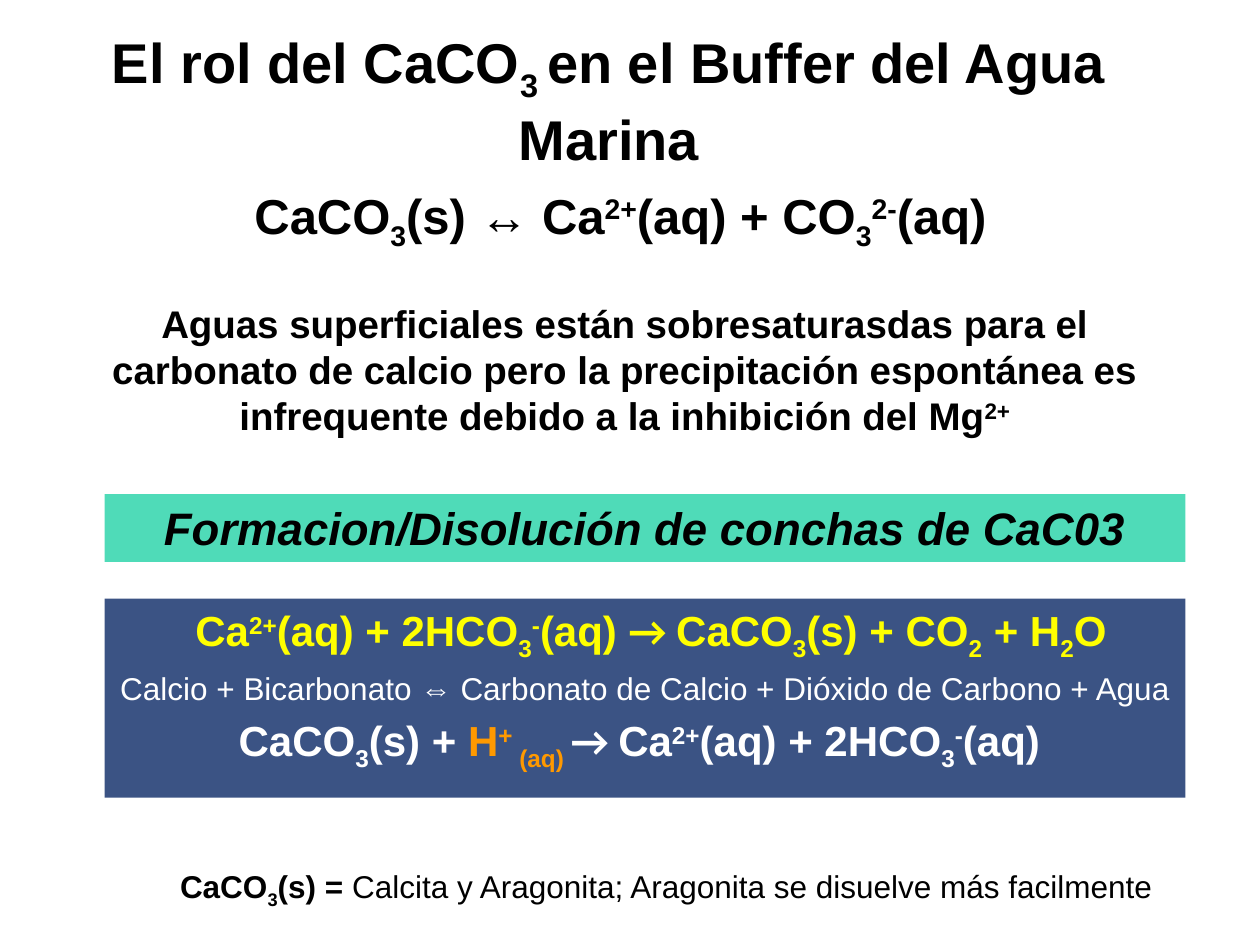
"""Build a slide on the role of CaCO3 in buffering sea water."""
from lxml.etree import SubElement
from pptx import Presentation
from pptx.dml.color import RGBColor
from pptx.enum.shapes import MSO_SHAPE
from pptx.enum.text import MSO_ANCHOR, MSO_AUTO_SIZE, PP_ALIGN
from pptx.oxml.ns import qn
from pptx.util import Cm, Pt

BASE = {"_": "-25000", "^": "30000"}
BLACK, WHITE, YELLOW, ORANGE = "000000", "FFFFFF", "FFFF00", "FF9900"
ARROW = ("→ ", {"font": "Calibri"})
PLAIN = {"bold": False}

# In formulas, | parts the runs, a leading _ lowers a run and ^ raises it.
TITLE = ["El rol del CaCO|_3 |en el Buffer del Agua Marina"]
NOTE = ["Aguas superficiales están sobresaturasdas para el carbonato de calcio "
        "pero la precipitación espontánea es infrequente debido a la "
        "inhibición del Mg|^2+"]
SPLIT = ["CaCO|_3|(s)", (" ↔ ", PLAIN), "Ca|^2+|(aq) + CO|_3|^2-|(aq)"]
HEAD = ["Formacion/Disolución de conchas de CaC03"]
FORM = [" Ca|^2+|(aq) + 2HCO|_3|^-|(aq) ", ARROW,
        "CaCO|_3|(s) + CO|_2| + H|_2|O"]
WORDS = ["Calcio + Bicarbonato ⇔ Carbonato de Calcio + Dióxido de Carbono + Agua "]
SOLVE = ["CaCO|_3|(s) + ", ("H|^+ |_(aq) ", {"color": ORANGE}), ARROW,
         "Ca|^2+|(aq) + 2HCO|_3|^-|(aq) "]
FOOT = ["CaCO|_3|(s) = ",
        ("Calcita y Aragonita; Aragonita se disuelve más facilmente", PLAIN)]

LEFT = {"align": PP_ALIGN.LEFT}
BOXES = [
    ((1.9, 0.84, 20.75, 2.34), {"anchor": MSO_ANCHOR.MIDDLE},
     [(TITLE, {"size": 32})]),
    ((1.9, 5.92, 21.39, 3.07), {"grow": True}, [(NOTE, {"size": 22})]),
    ((4.88, 3.61, 16.46, 1.45), {"grow": True, "wrap": False},
     [(SPLIT, {"size": 28, **LEFT})]),
    ((2.11, 12.07, 21.79, 4.01), {"fill": "002060", "alpha": 77},
     [(FORM, {"size": 24, "color": YELLOW, "gap": 0.2}),
      (WORDS, {"size": 18, "color": WHITE, "gap": 0.2, **PLAIN}),
      (SOLVE, {"size": 24, "color": WHITE, "gap": 0.2})]),
    ((2.11, 9.96, 21.79, 1.37), {"fill": "00CC99", "alpha": 69, "grow": True},
     [(HEAD, {"size": 26, "italic": True})]),
    ((3.38, 17.35, 20.5, 1.02), {"grow": True, "wrap": False},
     [(FOOT, {"size": 18, **LEFT})]),
]


def paint(fill, hue):
    fill.solid()
    fill.fore_color.rgb = RGBColor.from_string(hue)


def write(para, text, size=18, font="Arial", color=BLACK, bold=True, italic=False):
    for part in text.split("|"):
        base = BASE.get(part[0])
        run = para.add_run()
        run.text = part[1:] if base else part
        face = run.font
        face.size, face.name = Pt(size), font
        face.bold, face.italic = bold, italic
        paint(face.fill, color)
        if base:
            run._r.get_or_add_rPr().set("baseline", base)


def place(slide, spot, fill=None, alpha=100):
    spot = [Cm(side) for side in spot]
    if not fill:
        return slide.shapes.add_textbox(*spot)
    shape = slide.shapes.add_shape(MSO_SHAPE.RECTANGLE, *spot)
    shape.shadow.inherit = False
    shape.line.fill.background()
    paint(shape.fill, fill)
    tint = shape._element.spPr.find(qn("a:solidFill"))[0]
    SubElement(tint, qn("a:alpha"), val=str(alpha * 1000))
    return shape


def fill_text(frame, paras, grow=False, wrap=True, anchor=MSO_ANCHOR.TOP):
    frame.word_wrap, frame.vertical_anchor = wrap, anchor
    frame.auto_size = MSO_AUTO_SIZE.SHAPE_TO_FIT_TEXT if grow else MSO_AUTO_SIZE.NONE
    for i, (items, style) in enumerate(paras):
        style = dict(style)
        para = frame.add_paragraph() if i else frame.paragraphs[0]
        para.alignment = style.pop("align", PP_ALIGN.CENTER)
        para.space_before = Pt(round(style.pop("gap", 0) * style["size"], 1))
        for item in items:
            text, extra = (item, {}) if isinstance(item, str) else item
            write(para, text, **{**style, **extra})


def main():
    deck = Presentation()
    deck.slide_width, deck.slide_height = Cm(25.4), Cm(19.05)
    slide = deck.slides.add_slide(deck.slide_layouts[6])
    for spot, look, paras in BOXES:
        look = dict(look)
        skin = {key: look.pop(key) for key in ("fill", "alpha") if key in look}
        fill_text(place(slide, spot, **skin).text_frame, paras, **look)
    deck.save("out.pptx")


if __name__ == "__main__":
    main()
